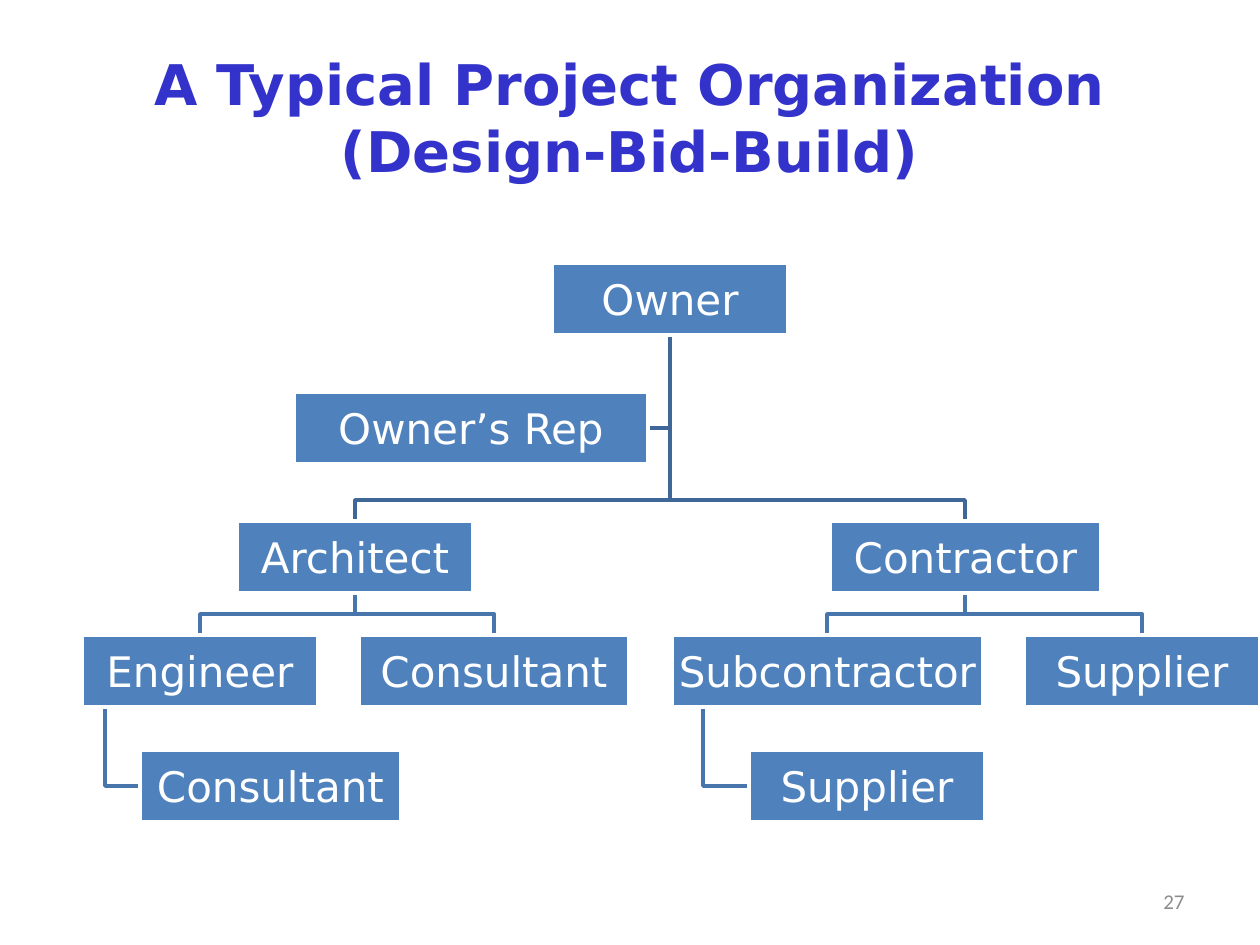
from pptx import Presentation
from pptx.dml.color import RGBColor
from pptx.enum.shapes import MSO_SHAPE
from pptx.enum.text import MSO_ANCHOR, PP_ALIGN
from pptx.util import Pt

SCALE = 914400 / 126
RECTANGLE = MSO_SHAPE.RECTANGLE
MIDDLE = MSO_ANCHOR.MIDDLE
CENTER, RIGHT = PP_ALIGN.CENTER, PP_ALIGN.RIGHT

TITLE_BLUE = RGBColor(0x33, 0x33, 0xCC)
BOX_BLUE = RGBColor(0x4F, 0x81, 0xBD)
TOP_LINE = RGBColor(0x3F, 0x67, 0x97)
LOWER_LINE = RGBColor(0x48, 0x75, 0xAC)
WHITE = RGBColor(0xFF, 0xFF, 0xFF)
GRAY = RGBColor(0x8C, 0x8C, 0x8C)

BOX_HEIGHT = 72
BRANCH_RISE = 21
ROLES = {
    "owner": ("Owner", 552, 263, 236),
    "rep": ("Owner’s Rep", 294, 392, 354),
    "architect": ("Architect", 237, 521, 236),
    "contractor": ("Contractor", 830, 521, 271),
    "engineer": ("Engineer", 82, 635, 236),
    "design consultant": ("Consultant", 359, 635, 270),
    "subcontractor": ("Subcontractor", 672, 635, 311),
    "contract supplier": ("Supplier", 1024, 635, 236),
    "engineer consultant": ("Consultant", 140, 750, 261),
    "sub supplier": ("Supplier", 749, 750, 236),
}
BRANCHES = [
    ("owner", "architect", TOP_LINE),
    ("owner", "contractor", TOP_LINE),
    ("architect", "engineer", LOWER_LINE),
    ("architect", "design consultant", LOWER_LINE),
    ("contractor", "subcontractor", LOWER_LINE),
    ("contractor", "contract supplier", LOWER_LINE),
]
HANGERS = [("engineer", "engineer consultant"), ("subcontractor", "sub supplier")]


def px(value):
    return round(value * SCALE)


def add_span(para, text, font, size, color, bold=False):
    span = para.add_run()
    span.text = text
    span.font.name = font
    span.font.size = Pt(size)
    span.font.color.rgb = color
    span.font.bold = bold


def add_title(slide):
    title = slide.shapes.title
    title.left, title.top, title.width, title.height = map(px, (63, 38, 1134, 157))
    title.text_frame.vertical_anchor = MIDDLE
    para = title.text_frame.paragraphs[0]
    para.alignment = CENTER
    add_span(para, "A Typical Project Organization", "DejaVu Sans", 32, TITLE_BLUE, True)
    para.add_line_break()
    add_span(para, "(Design-Bid-Build)", "DejaVu Sans", 32, TITLE_BLUE, True)


def add_page_number(slide):
    box = slide.shapes.add_textbox(*map(px, (903, 876, 294, 50)))
    box.text_frame.word_wrap = True
    box.text_frame.vertical_anchor = MIDDLE
    para = box.text_frame.paragraphs[0]
    para.alignment = RIGHT
    add_span(para, "27", "Calibri", 12, GRAY)


def add_role(slide, text, left, top, width):
    box = slide.shapes.add_shape(RECTANGLE, *map(px, (left, top, width, BOX_HEIGHT)))
    box.shadow.inherit = False
    box.fill.solid()
    box.fill.fore_color.rgb = BOX_BLUE
    box.line.color.rgb = WHITE
    box.line.width = Pt(2)
    frame = box.text_frame
    frame.margin_left = frame.margin_right = px(2)
    frame.margin_top = frame.margin_bottom = px(2)
    frame.word_wrap = False
    frame.vertical_anchor = MIDDLE
    para = frame.paragraphs[0]
    para.alignment = CENTER
    add_span(para, text, "DejaVu Sans", 24, WHITE)


def add_path(slide, points, color):
    builder = slide.shapes.build_freeform(*points[0], scale=SCALE)
    builder.add_line_segments(points[1:], close=False)
    path_shape = builder.convert_to_shape()
    path_shape.shadow.inherit = False
    path_shape.fill.background()
    path_shape.line.color.rgb = color
    path_shape.line.width = Pt(2)


def center_x(role):
    _, left, _, width = ROLES[role]
    return left + width // 2


def middle_y(role):
    return ROLES[role][2] + BOX_HEIGHT // 2


def bottom_y(role):
    return ROLES[role][2] + BOX_HEIGHT


def add_branch(slide, parent, child, color):
    start, end = center_x(parent), center_x(child)
    top = ROLES[child][2]
    turn = top - BRANCH_RISE
    add_path(slide, [(start, bottom_y(parent)), (start, turn), (end, turn), (end, top)], color)


def add_elbow(slide, parent, child, start, end, color):
    turn = middle_y(child)
    add_path(slide, [(start, bottom_y(parent)), (start, turn), (end, turn)], color)


def main():
    deck = Presentation()
    deck.slide_width, deck.slide_height = px(1260), px(945)
    slide = deck.slides.add_slide(deck.slide_layouts[5])
    add_title(slide)
    add_page_number(slide)
    _, rep_left, _, rep_width = ROLES["rep"]
    add_elbow(slide, "owner", "rep", center_x("owner"), rep_left + rep_width, TOP_LINE)
    for parent, child, color in BRANCHES:
        add_branch(slide, parent, child, color)
    for parent, child in HANGERS:
        _, left, _, width = ROLES[parent]
        add_elbow(slide, parent, child, left + width // 10, ROLES[child][1], LOWER_LINE)
    for role in ROLES.values():
        add_role(slide, *role)
    deck.save("out.pptx")


if __name__ == "__main__":
    main()
